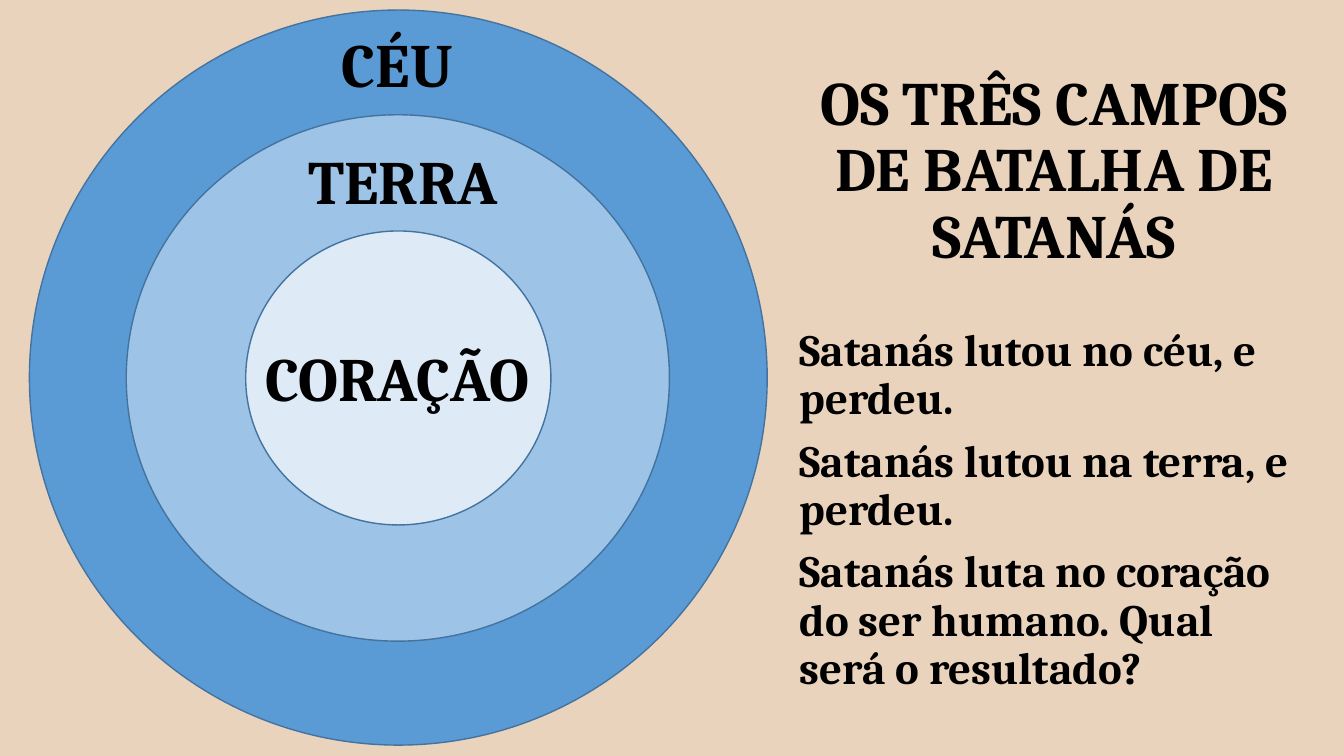
"""Builds a slide with three nested circles beside a title and three statements."""
from pptx import Presentation
from pptx import util as u
from pptx.dml.color import RGBColor
from pptx.enum import shapes, text

SAND = RGBColor(0xE9, 0xD3, 0xBD)
BLUE = RGBColor(0x5B, 0x9B, 0xD5)
LIGHT_BLUE = RGBColor(0x9D, 0xC3, 0xE6)
PALE_BLUE = RGBColor(0xDE, 0xEB, 0xF7)
OUTLINE = RGBColor(0x43, 0x73, 0x9E)
BLACK = RGBColor(0, 0, 0)

SLIDE_SIZE = (960, 540)
CIRCLES = [
    ((21, 7.2, 527, 525), BLUE),
    ((90.2, 82, 388, 376), LIGHT_BLUE),
    ((175.5, 165, 218, 210), PALE_BLUE),
]
HEADINGS = [
    ("OS TRÊS CAMPOS DE BATALHA DE SATANÁS", (564, 14.4, 378, 183)),
    ("CÉU", (107, 14.4, 354, 61)),
    ("TERRA", (111, 98, 354, 61)),
    ("CORAÇÃO", (107, 239, 354, 61)),
]
STATEMENTS = [
    "Satanás lutou no céu, e perdeu.",
    "Satanás lutou na terra, e perdeu.",
    "Satanás luta no coração do ser humano. Qual será o resultado?",
]
STATEMENTS_BOX = (564, 230.4, 378, 293)
HEADING_FORMAT = {"name": "Cambria", "size": u.Pt(44), "bold": True}
STATEMENT_FORMAT = {**HEADING_FORMAT, "size": u.Pt(32)}


def points(box):
    return [u.Pt(value) for value in box]


def add_filled(slide, kind, box, color, outline=None):
    shape = slide.shapes.add_shape(kind, *points(box))
    shape.shadow.inherit = False
    shape.fill.solid()
    shape.fill.fore_color.rgb = color
    if outline is None:
        shape.line.fill.background()
    else:
        shape.line.color.rgb = outline
        shape.line.width = u.Pt(1)


def add_text(slide, box, lines, font_format, alignment, anchor):
    frame = slide.shapes.add_textbox(*points(box)).text_frame
    frame.word_wrap = True
    frame.vertical_anchor = anchor
    for index, line in enumerate(lines):
        paragraph = frame.add_paragraph() if index else frame.paragraphs[0]
        paragraph.text = line
        paragraph.alignment = alignment
        paragraph.line_spacing = 0.9
        paragraph.space_before = u.Pt(10 if index else 0)
        font = paragraph.runs[0].font
        for name, value in font_format.items():
            setattr(font, name, value)
        font.color.rgb = BLACK


def main():
    presentation = Presentation()
    presentation.slide_width, presentation.slide_height = points(SLIDE_SIZE)
    slide = presentation.slides.add_slide(presentation.slide_layouts[6])
    add_filled(slide, shapes.MSO_SHAPE.RECTANGLE, (0, 0, *SLIDE_SIZE), SAND)
    for box, color in CIRCLES:
        add_filled(slide, shapes.MSO_SHAPE.OVAL, box, color, OUTLINE)
    for heading, box in HEADINGS:
        add_text(slide, box, [heading], HEADING_FORMAT,
                 text.PP_ALIGN.CENTER, text.MSO_ANCHOR.BOTTOM)
    add_text(slide, STATEMENTS_BOX, STATEMENTS, STATEMENT_FORMAT,
             text.PP_ALIGN.LEFT, text.MSO_ANCHOR.TOP)
    presentation.save("out.pptx")


if __name__ == "__main__":
    main()
